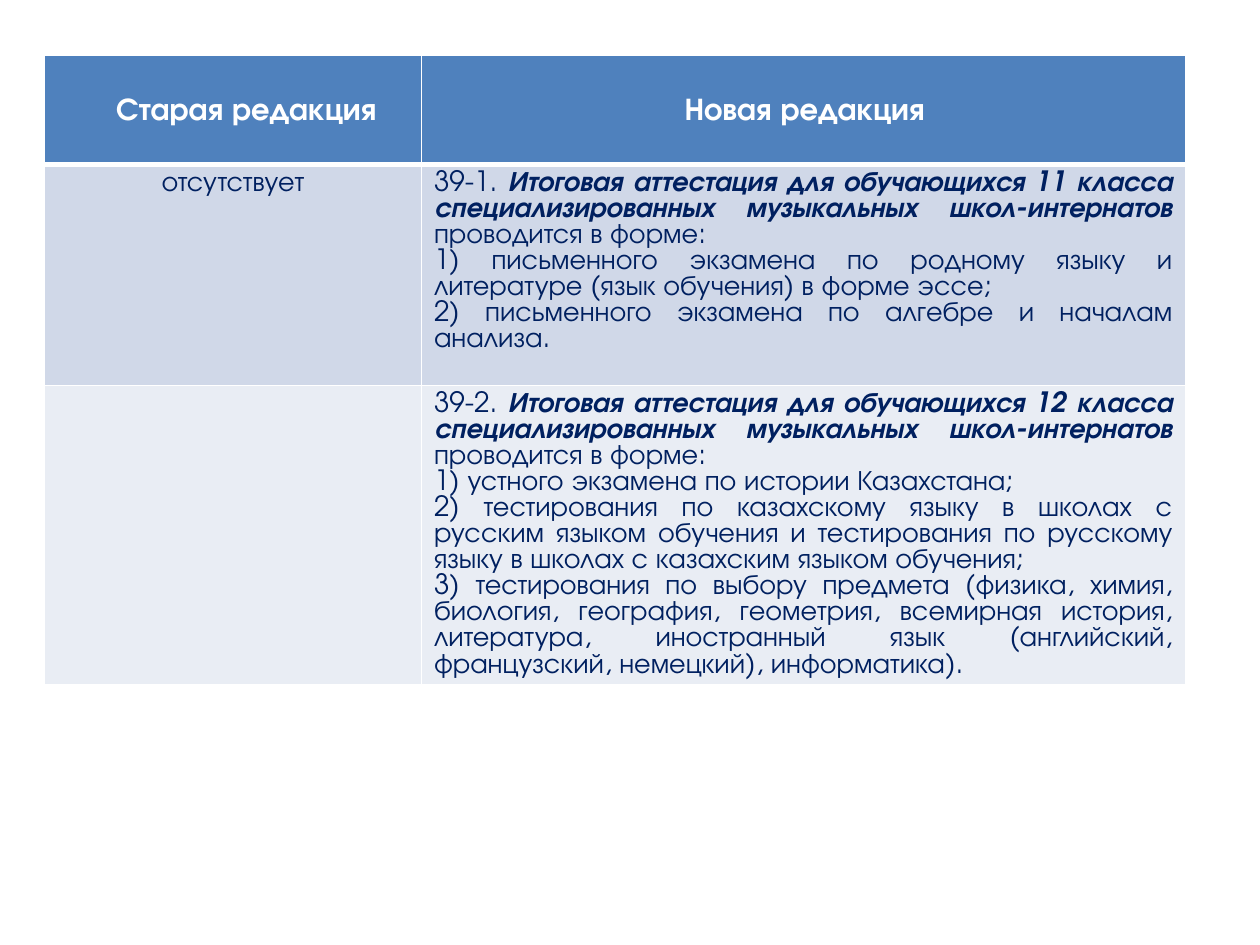
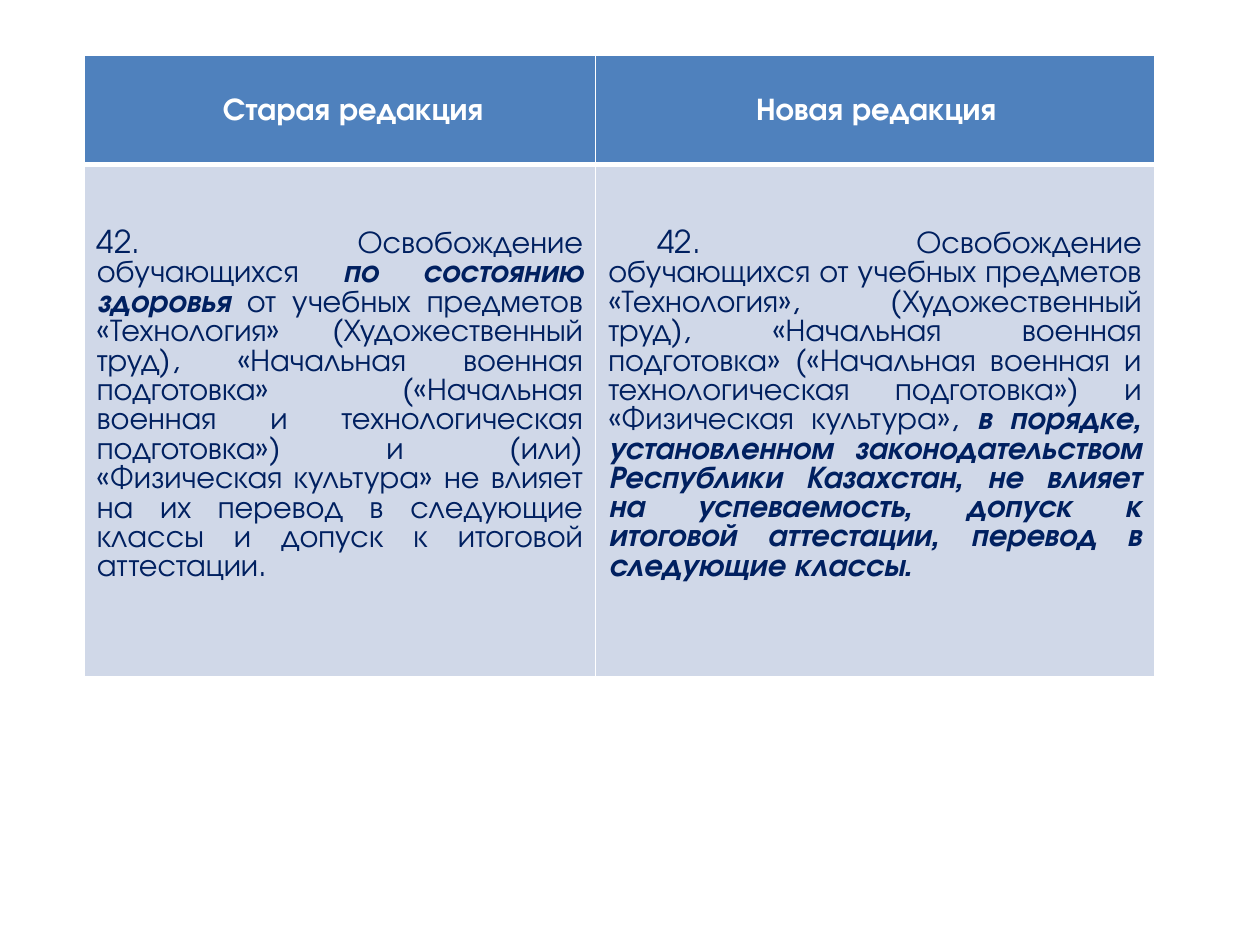
"""Build two slides that compare the old and new wording of the rules."""
from dataclasses import dataclass

from lxml.etree import SubElement
from pptx import Presentation
from pptx.dml.color import RGBColor
from pptx.enum.text import MSO_ANCHOR, PP_ALIGN
from pptx.oxml.ns import qn
from pptx.util import Emu, Inches, Pt

WIDTH, HEIGHT = Inches(10), Inches(7.5)
FONT = "TeX Gyre Adventor"
WHITE = RGBColor(0xFF, 0xFF, 0xFF)
NAVY = RGBColor(0x00, 0x20, 0x60)
BLUE = RGBColor(0x4F, 0x81, 0xBD)
BANDS = (RGBColor(0xD0, 0xD8, 0xE8), RGBColor(0xE9, 0xED, 0xF4))
TOP_PERCENT = 5.87
HEADER_PERCENT = 11.55
THIN, THICK = Pt(1), Pt(3)


@dataclass(frozen=True)
class Span:
    text: str
    strong: bool = False


@dataclass(frozen=True)
class Entry:
    paragraphs: tuple[tuple[Span, ...], ...] = ()
    align: PP_ALIGN = PP_ALIGN.JUSTIFY
    left: float = 0
    indent: float = 0


@dataclass(frozen=True)
class Comparison:
    left: float
    columns: tuple[float, float]
    rows: tuple[float, ...]
    size: int
    text_top: float
    entries: tuple[tuple[Entry, Entry], ...]


HEADERS = (
    Entry(((Span("Старая редакция"),),), PP_ALIGN.CENTER, 0.01, 0.2),
    Entry(((Span("Новая редакция"),),), PP_ALIGN.CENTER, 0.02),
)


def attestation(number: str, grade: int, *exams: str) -> Entry:
    """Return the rule on final attestation for one grade."""
    title = (
        Span(f"{number}. "),
        Span(f"Итоговая аттестация для обучающихся {grade} класса "
             "специализированных музыкальных школ-интернатов", True),
        Span(" проводится в форме:"),
    )
    return Entry((title, *((Span(f"{i}) {exam}"),) for i, exam in enumerate(exams, 1))))


SLIDES = (
    Comparison(3.55, (29.9, 60.65), (23.4, 31.6), 16, 0.05, (
        (Entry(((Span("отсутствует"),),), PP_ALIGN.CENTER),
         attestation(
             "39-1", 11,
             "письменного экзамена по родному языку и литературе "
             "(язык обучения) в форме эссе;",
             "письменного экзамена по алгебре и началам анализа.")),
        (Entry(),
         attestation(
             "39-2", 12,
             "устного экзамена по истории Казахстана;",
             "тестирования по казахскому языку в школах с русским языком обучения "
             "и тестирования по русскому языку в школах с казахским языком обучения;",
             "тестирования по выбору предмета (физика, химия, биология, география, "
             "геометрия, всемирная история, литература, иностранный язык "
             "(английский, французский, немецкий), информатика).")),
    )),
    Comparison(6.68, (40.6, 44.35), (54.25,), 18, 0.52, (
        (Entry(((
            Span("42. Освобождение обучающихся "),
            Span("по состоянию здоровья ", True),
            Span("от учебных предметов «Технология» (Художественный труд), "
                 "«Начальная военная подготовка» («Начальная военная и "
                 "технологическая подготовка») и (или) «Физическая культура» "
                 "не влияет на их перевод в следующие классы и допуск к "
                 "итоговой аттестации."),
        ),)),
         Entry(((
             Span("42. Освобождение обучающихся от учебных предметов «Технология», "
                  "(Художественный труд), «Начальная военная подготовка» («Начальная "
                  "военная и технологическая подготовка») и «Физическая культура», "),
             Span("в порядке, установленном законодательством Республики Казахстан, "
                  "не влияет на успеваемость, допуск к итоговой аттестации, "
                  "перевод в следующие классы.", True),
         ),), indent=0.39)),
    )),
)


def share(percent: float, whole: int) -> Emu:
    """Return a percentage of a slide dimension."""
    return Emu(round(percent * whole / 100))


def set_borders(cell, top: int, bottom: int) -> None:
    """Give a cell white borders."""
    tc_pr = cell._tc.get_or_add_tcPr()
    for side, width in (("L", THIN), ("R", THIN), ("T", top), ("B", bottom)):
        ln = SubElement(tc_pr, qn(f"a:ln{side}"), w=str(int(width)))
        fill = SubElement(ln, qn("a:solidFill"))
        SubElement(fill, qn("a:srgbClr"), val=str(WHITE))


def write_entry(cell, entry: Entry, size: int, color: RGBColor, header: bool) -> None:
    """Write the formatted paragraphs of a cell."""
    tf = cell.text_frame
    for i, spans in enumerate(entry.paragraphs):
        p = tf.add_paragraph() if i else tf.paragraphs[0]
        p.alignment = entry.align
        if header:
            p.line_spacing = 1.15
        p_pr = p._p.get_or_add_pPr()
        p_pr.set("marL", str(int(Inches(entry.left))))
        p_pr.set("indent", str(int(Inches(entry.indent))))
        for span in spans:
            r = p.add_run()
            r.text = span.text
            r.font.name, r.font.size = FONT, Pt(size)
            r.font.bold = header or span.strong
            r.font.italic = span.strong
            r.font.color.rgb = color


def add_comparison(prs, item: Comparison) -> None:
    """Add a slide with one comparison table."""
    s = prs.slides.add_slide(prs.slide_layouts[6])
    heights = (HEADER_PERCENT, *item.rows)
    table = s.shapes.add_table(
        len(heights), len(item.columns),
        share(item.left, WIDTH), share(TOP_PERCENT, HEIGHT),
        share(sum(item.columns), WIDTH), share(sum(heights), HEIGHT)).table
    for column, percent in zip(table.columns, item.columns):
        column.width = share(percent, WIDTH)
    for row, percent in zip(table.rows, heights):
        row.height = share(percent, HEIGHT)
    for i, entries in enumerate((HEADERS, *item.entries)):
        header = i == 0
        for j, entry in enumerate(entries):
            cell = table.cell(i, j)
            set_borders(cell, THICK if i == 1 else THIN, THICK if header else THIN)
            cell.fill.solid()
            cell.fill.fore_color.rgb = BLUE if header else BANDS[(i - 1) % 2]
            if header:
                cell.vertical_anchor = MSO_ANCHOR.MIDDLE
                cell.margin_left = cell.margin_right = Inches(0.07)
                cell.margin_top = cell.margin_bottom = 0
                write_entry(cell, entry, 18, WHITE, header)
            else:
                cell.margin_top = Inches(item.text_top)
                write_entry(cell, entry, item.size, NAVY, header)


def main() -> None:
    """Build and save the presentation."""
    prs = Presentation()
    prs.slide_width, prs.slide_height = WIDTH, HEIGHT
    for item in SLIDES:
        add_comparison(prs, item)
    prs.save("out.pptx")


if __name__ == "__main__":
    main()
